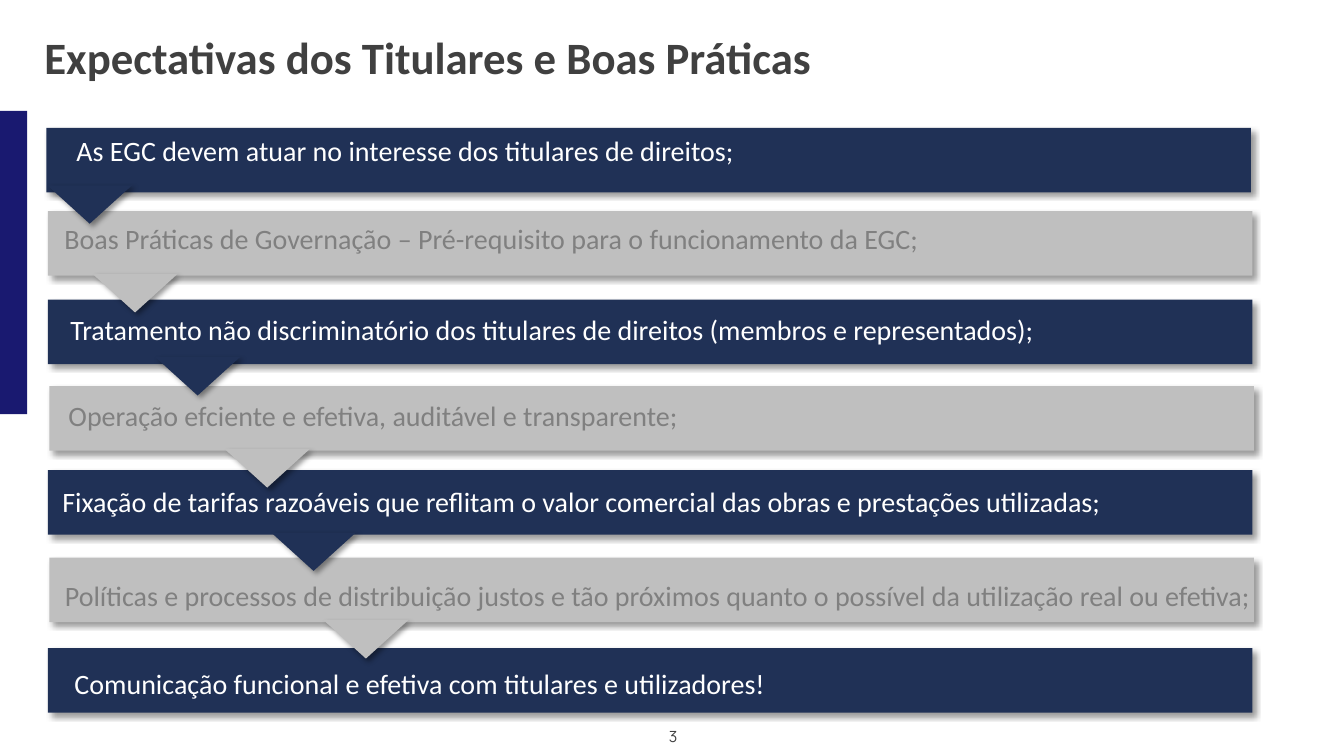
from lxml import etree
from pptx import Presentation
from pptx.dml.color import RGBColor
from pptx.enum.shapes import MSO_SHAPE
from pptx.enum.text import MSO_ANCHOR, PP_ALIGN
from pptx.oxml.ns import qn
from pptx.util import Pt

RECT, TRIANGLE = MSO_SHAPE.RECTANGLE, MSO_SHAPE.ISOSCELES_TRIANGLE
LEFT, CENTER, RIGHT = PP_ALIGN.LEFT, PP_ALIGN.CENTER, PP_ALIGN.RIGHT
TOP = MSO_ANCHOR.TOP

COLORS = {"accent": "191970", "navy": "203156", "silver": "BFBFBF",
          "white": "FFFFFF", "gray": "808080", "dark": "404040",
          "black": "000000"}
THEMES = [("navy", "white"), ("silver", "gray")]
BAR_W, BAR_H = 860.4, 46.1
TIP_W, TIP_H = 60.5, 27.4
TEXT_H = 31.7

# bar left, bar top, text box offset (x, y) and width, alignment, arrow offset (x, y), text
ROWS = [
    (33.1, 91.4, (14.4, 0.7), 488.9, LEFT, (0.7, 41),
     "As EGC devem atuar no interesse dos titulares de direitos;"),
    (34.2, 150.8, (-24, 3.6), 681.8, CENTER, (32, 45),
     "Boas Práticas de Governação – Pré-requisito para o funcionamento da EGC;"),
    (34.2, 214.1, (9, 5.8), 866.2, LEFT, (76.7, 41),
     "Tratamento não discriminatório dos titulares de direitos (membros e representados);"),
    (35.3, 275.9, (6.5, 5), 454.3, LEFT, (125.3, 45),
     "Operação efciente e efetiva, auditável e transparente;"),
    (34.2, 335.8, (-56.5, 6.5), 875.5, CENTER, (159.5, 44.6),
     "Fixação de tarifas razoáveis que reflitam o valor comercial das obras e prestações utilizadas;"),
    (35.3, 398.4, (-1.5, 11.3), 871.9, CENTER, (195.8, 44.6),
     "Políticas e processos de distribuição justos e tão próximos quanto o possível da utilização real ou efetiva;"),
    (34.2, 463, (11.9, 9.4), 511.2, LEFT, None,
     "Comunicação funcional e efetiva com titulares e utilizadores!"),
]


def rgb(name):
    return RGBColor.from_string(COLORS[name])


def place(shape, box):
    shape.left, shape.top, shape.width, shape.height = map(Pt, box)


def write(shape, text, size, color, font="Calibri", align=LEFT, bold=False):
    frame = shape.text_frame
    frame.word_wrap = True
    frame.vertical_anchor = TOP
    para = frame.paragraphs[0]
    para.alignment = align
    run = para.add_run()
    run.text = text
    run.font.size = Pt(size)
    run.font.name = font
    run.font.bold = bold
    run.font.color.rgb = rgb(color)
    return para


def add_solid(shapes, kind, box, color):
    shape = shapes.add_shape(kind, *map(Pt, box))
    shape.shadow.inherit = False
    shape.fill.solid()
    shape.fill.fore_color.rgb = rgb(color)
    shape.line.fill.background()
    return shape


def cast(shape):
    """Give the shape a soft shadow towards the lower right."""
    effects = shape.element.spPr.find(qn("a:effectLst"))
    outer = etree.SubElement(effects, qn("a:outerShdw"), blurRad=str(Pt(4)),
                             dist=str(Pt(3)), dir="2700000", algn="tl",
                             rotWithShape="0")
    tint = etree.SubElement(outer, qn("a:srgbClr"), val=COLORS["black"])
    etree.SubElement(tint, qn("a:alpha"), val="40000")


def add_title(slide, box):
    title = slide.shapes.title
    place(title, box)
    para = write(title, "Expectativas dos Titulares e Boas Práticas", 32, "dark", bold=True)
    para.line_spacing = 0.9


def add_row(slide, row, theme):
    """Draw one bar with its text and the arrow tip that leads to the next bar."""
    left, top, shift, width, align, tip, text = row
    fill, ink = theme
    shapes = slide.shapes.add_group_shape().shapes
    cast(add_solid(shapes, RECT, (left, top, BAR_W, BAR_H), fill))
    label = shapes.add_textbox(Pt(left + shift[0]), Pt(top + shift[1]), Pt(width), Pt(TEXT_H))
    write(label, text, 20, ink, align=align)
    if tip:
        arrow = add_solid(shapes, TRIANGLE, (left + tip[0], top + tip[1], TIP_W, TIP_H), fill)
        arrow.rotation = 180
        cast(arrow)


def add_number(slide, box):
    number = slide.shapes.add_textbox(*map(Pt, box))
    write(number, "3", 11, "dark", font="Manrope", align=RIGHT)


def main():
    deck = Presentation()
    deck.slide_width, deck.slide_height = Pt(960), Pt(540)
    slide = deck.slides.add_slide(deck.slide_layouts[5])
    add_title(slide, (24.5, 21.6, 820, 54))
    add_solid(slide.shapes, RECT, (0, 79.2, 19.4, 216.7), "accent")
    # Each arrow tip overlaps the bar below it, so the rows go from bottom to top.
    for index in reversed(range(len(ROWS))):
        add_row(slide, ROWS[index], THEMES[index % 2])
    add_number(slide, (460, 515.5, 31, 24))
    deck.save("out.pptx")


if __name__ == "__main__":
    main()
